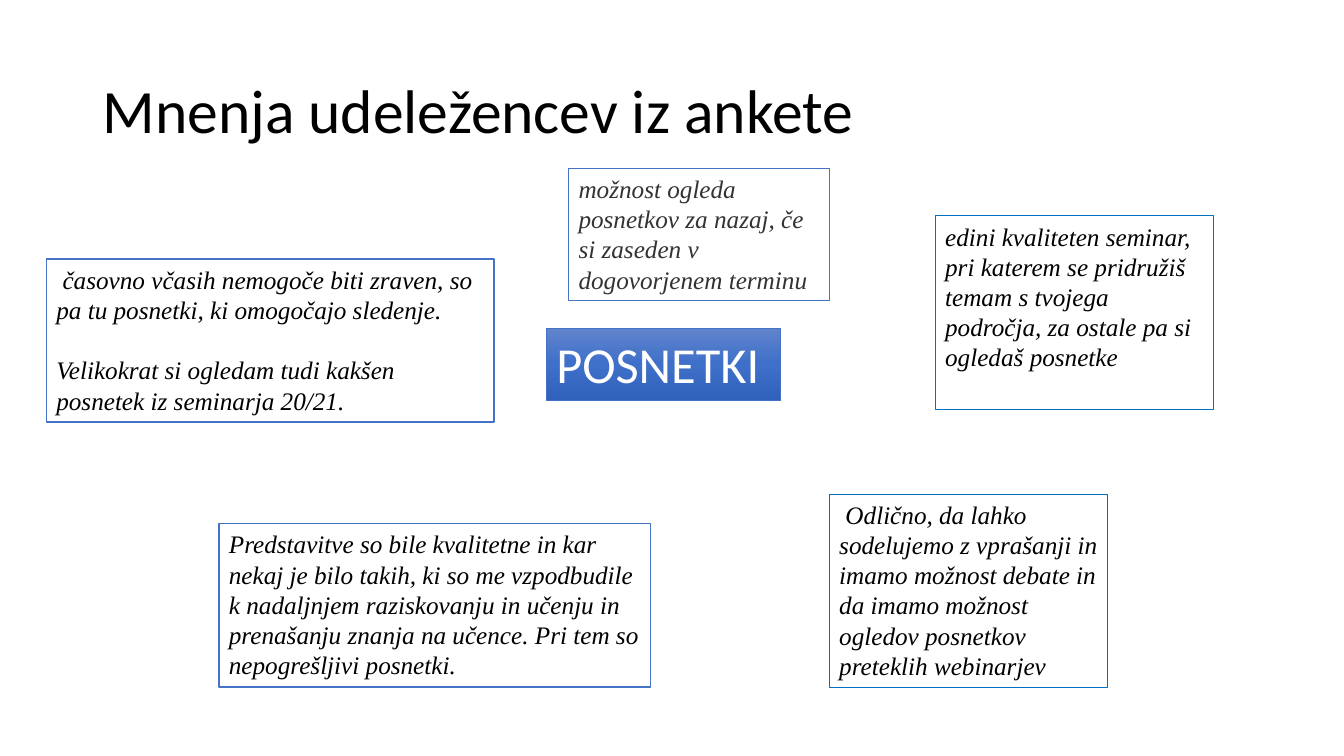
from copy import deepcopy
from dataclasses import dataclass

from pptx import Presentation
from pptx.dml.color import RGBColor
from pptx.enum.shapes import MSO_SHAPE
from pptx.enum.text import MSO_ANCHOR, MSO_AUTO_SIZE, PP_ALIGN
from pptx.util import Cm, Pt

RECTANGLE = MSO_SHAPE.RECTANGLE
TOP, MIDDLE = MSO_ANCHOR.TOP, MSO_ANCHOR.MIDDLE
LEFT = PP_ALIGN.LEFT
GROW = MSO_AUTO_SIZE.SHAPE_TO_FIT_TEXT
TITLE_ONLY = 5


@dataclass(frozen=True)
class Theme:
    """Colours, fonts and type sizes of the slide."""
    black: str = "000000"
    grey: str = "333333"
    white: str = "FFFFFF"
    blue: str = "4472C4"
    bright_blue: str = "0070C0"
    gradient: tuple = ("6183CB", "3E70CA", "3062BB")
    heading_font: str = "Calibri"
    quote_font: str = "Times New Roman"
    title_size: int = 44
    topic_size: int = 36
    quote_size: int = 18
    paragraph_gap: float = 21.6


def write_text(frame, text, *, font, size, color, italic=False,
               anchor=TOP, spacing=None, gap=0):
    """Fill a text frame, one paragraph per line of text."""
    frame.word_wrap = True
    frame.vertical_anchor = anchor
    for index, line in enumerate(text.split("\n")):
        paragraph = frame.add_paragraph() if index else frame.paragraphs[0]
        paragraph.alignment = LEFT
        paragraph.line_spacing = spacing
        paragraph.space_before = Pt(gap if index else 0)
        run = paragraph.add_run()
        run.text = line
        run.font.name = font
        run.font.size = Pt(size)
        run.font.italic = italic
        run.font.color.rgb = RGBColor.from_string(color)


class SurveySlide:
    """Builds the elements of one slide in a shared style."""

    def __init__(self, presentation, theme):
        """Add a title-only slide."""
        self.theme = theme
        self.slide = presentation.slides.add_slide(
            presentation.slide_layouts[TITLE_ONLY])

    def title(self, text, left, top, width, height):
        """Place and format the title."""
        heading = self.slide.shapes.title
        heading.left, heading.top = Cm(left), Cm(top)
        heading.width, heading.height = Cm(width), Cm(height)
        write_text(heading.text_frame, text, font=self.theme.heading_font,
                   size=self.theme.title_size, color=self.theme.black,
                   anchor=MIDDLE, spacing=0.9)

    def box(self, left, top, width, height, line_color, line_width):
        """Add an outlined rectangle that grows with its text."""
        box = self.slide.shapes.add_shape(
            RECTANGLE, Cm(left), Cm(top), Cm(width), Cm(height))
        box.shadow.inherit = False
        box.line.color.rgb = RGBColor.from_string(line_color)
        box.line.width = Pt(line_width)
        box.text_frame.auto_size = GROW
        return box

    def quote(self, text, left, top, width, height, color=None, filled=True):
        """Add a participant's opinion."""
        theme = self.theme
        outline = (theme.blue, 1) if filled else (theme.bright_blue, 0.75)
        opinion = self.box(left, top, width, height, *outline)
        if filled:
            opinion.fill.solid()
            opinion.fill.fore_color.rgb = RGBColor.from_string(theme.white)
        else:
            opinion.fill.background()
        write_text(opinion.text_frame, text, font=theme.quote_font,
                   size=theme.quote_size, color=color or theme.black,
                   italic=True, gap=theme.paragraph_gap)

    def topic(self, text, left, top, width, height):
        """Add the central topic with a vertical gradient."""
        theme = self.theme
        topic = self.box(left, top, width, height, theme.blue, 0.5)
        topic.fill.gradient()
        topic.fill.gradient_angle = 270
        first_stop = topic.element.xpath(".//a:gsLst/a:gs")[0]
        first_stop.addnext(deepcopy(first_stop))
        for index, stop in enumerate(topic.fill.gradient_stops):
            stop.position = index / 2
            stop.color.rgb = RGBColor.from_string(theme.gradient[index])
        write_text(topic.text_frame, text, font=theme.heading_font,
                   size=theme.topic_size, color=theme.white)


def main():
    """Build and save the presentation."""
    presentation = Presentation()
    presentation.slide_width, presentation.slide_height = Cm(33.87), Cm(19.05)
    theme = Theme()
    survey = SurveySlide(presentation, theme)
    survey.title("Mnenja udeležencev iz ankete", 2.33, 1.01, 29.21, 3.68)
    survey.quote(
        "Predstavitve so bile kvalitetne in kar nekaj je bilo takih, ki so me "
        "vzpodbudile k nadaljnjem raziskovanju in učenju in prenašanju znanja "
        "na učence. Pri tem so nepogrešljivi posnetki.",
        5.52, 13.2, 10.87, 4.11)
    survey.quote(
        " časovno včasih nemogoče biti zraven, so pa tu posnetki, ki "
        "omogočajo sledenje.\n"
        "Velikokrat si ogledam tudi kakšen posnetek iz seminarja 20/21.",
        1.17, 6.53, 11.28, 4.11)
    survey.quote(
        "edini kvaliteten seminar, pri katerem se pridružiš temam s tvojega "
        "področja, za ostale pa si ogledaš posnetke",
        23.57, 5.44, 7.01, 4.88, filled=False)
    survey.topic("POSNETKI", 13.77, 8.28, 5.89, 1.8)
    survey.quote(
        " Odlično, da lahko sodelujemo z vprašanji in imamo možnost debate in "
        "da imamo možnost ogledov posnetkov preteklih webinarjev",
        20.9, 12.45, 7.01, 4.88, filled=False)
    survey.quote(
        "možnost ogleda posnetkov za nazaj, če si zaseden v dogovorjenem "
        "terminu", 14.33, 4.24, 6.58, 3.33, color=theme.grey)
    presentation.save("out.pptx")


if __name__ == "__main__":
    main()
